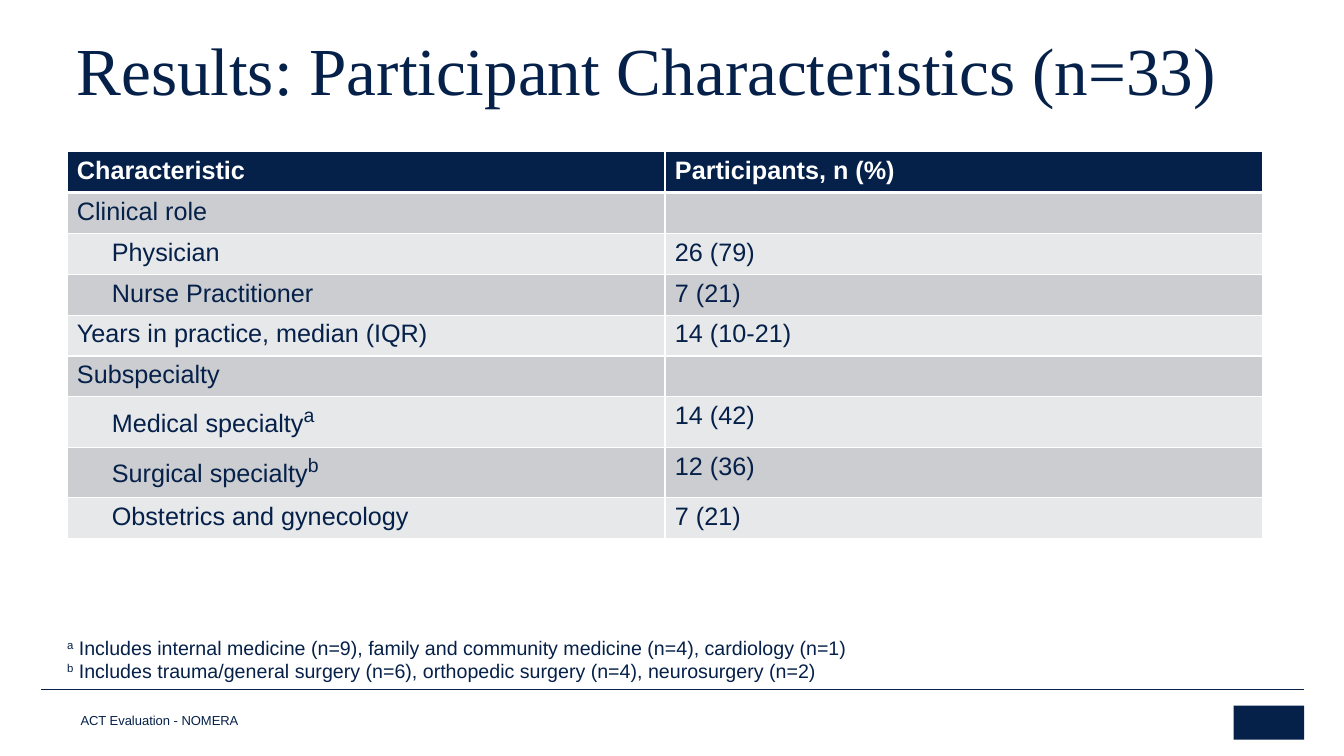
from lxml import etree
from pptx import Presentation
from pptx import util as u
from pptx.dml.color import RGBColor
from pptx.enum import shapes, text
from pptx.oxml.ns import qn

NAVY, WHITE = "052049", "FFFFFF"
BANDS = ["CCCDD0", "E7E8E9"]
ROW_HEIGHT, COLUMN_WIDTH = 1.03, 15.07
CELL_MARGIN, INDENT_MARGIN = 0.25, 1.13

# Label, value, indented, superscript mark
ROWS = [
    ("Clinical role", "", False, ""),
    ("Physician", "26 (79)", True, ""),
    ("Nurse Practitioner", "7 (21)", True, ""),
    ("Years in practice, median (IQR)", "14 (10-21)", False, ""),
    ("Subspecialty", "", False, ""),
    ("Medical specialty", "14 (42)", True, "a"),
    ("Surgical specialty", "12 (36)", True, "b"),
    ("Obstetrics and gynecology", "7 (21)", True, ""),
]
FOOTNOTES = [
    ("a", " Includes internal medicine (n=9), family and community medicine (n=4), cardiology (n=1)"),
    ("b", " Includes trauma/general surgery (n=6), orthopedic surgery (n=4), neurosurgery (n=2)"),
]


def color(value):
    return RGBColor.from_string(value)


def add_span(para, words, size=18, font="Arial", fill=NAVY, bold=False, raised=False):
    span = para.add_run()
    span.text = words
    span.font.size = u.Pt(size)
    span.font.name = font
    span.font.bold = bold
    span.font.color.rgb = color(fill)
    if raised:
        span._r.get_or_add_rPr().set("baseline", "30000")


def add_box(page, left, top, width, height, anchor, inset=0.0):
    box = page.shapes.add_textbox(u.Cm(left), u.Cm(top), u.Cm(width), u.Cm(height))
    frame = box.text_frame
    frame.word_wrap = True
    frame.vertical_anchor = anchor
    frame.margin_left = frame.margin_right = u.Cm(inset)
    frame.margin_top = frame.margin_bottom = u.Cm(inset / 2)
    return frame


def add_border(cell, side, points):
    line = etree.SubElement(cell._tc.get_or_add_tcPr(), qn(f"a:ln{side}"), w=str(u.Pt(points)))
    fill = etree.SubElement(line, qn("a:solidFill"))
    etree.SubElement(fill, qn("a:srgbClr"), val=WHITE)


def style_cell(cell, row, fill, margin=CELL_MARGIN):
    # The rule below the header is heavier than the others
    widths = {"L": 1, "R": 1, "T": 3 if row == 1 else 1, "B": 3 if row == 0 else 1}
    for side, points in widths.items():
        add_border(cell, side, points)
    cell.fill.solid()
    cell.fill.fore_color.rgb = color(fill)
    cell.margin_left = u.Cm(margin)


def add_characteristics(page):
    count = len(ROWS) + 1
    table = page.shapes.add_table(count, 2, u.Cm(1.69), u.Cm(3.82),
                                  u.Cm(2 * COLUMN_WIDTH), u.Cm(count * ROW_HEIGHT)).table
    for column in table.columns:
        column.width = u.Cm(COLUMN_WIDTH)
    for row in table.rows:
        row.height = u.Cm(ROW_HEIGHT)

    # Header
    for column, heading in enumerate(["Characteristic", "Participants, n (%)"]):
        cell = table.cell(0, column)
        style_cell(cell, 0, NAVY)
        add_span(cell.text_frame.paragraphs[0], heading, fill=WHITE, bold=True)

    # Body
    for row, (label, value, indented, mark) in enumerate(ROWS, start=1):
        fill = BANDS[(row - 1) % 2]
        name, number = table.cell(row, 0), table.cell(row, 1)
        style_cell(name, row, fill, INDENT_MARGIN if indented else CELL_MARGIN)
        style_cell(number, row, fill)
        para = name.text_frame.paragraphs[0]
        add_span(para, label)
        if mark:
            add_span(para, mark, size=24, raised=True)
        if value:
            add_span(number.text_frame.paragraphs[0], value)


def add_footnotes(page):
    frame = add_box(page, 1.69, 16.02, 30.25, 1.3, text.MSO_ANCHOR.TOP)
    for index, (mark, note) in enumerate(FOOTNOTES):
        para = frame.add_paragraph() if index else frame.paragraphs[0]
        add_span(para, mark, size=14, raised=True)
        add_span(para, note, size=14)


def add_rule(page, left, right, top):
    rule = page.shapes.add_connector(shapes.MSO_CONNECTOR.STRAIGHT,
                                     u.Cm(left), u.Cm(top), u.Cm(right), u.Cm(top))
    rule.line.color.rgb = color(NAVY)
    rule.line.width = u.Pt(0.25)
    etree.SubElement(rule._element.spPr, qn("a:effectLst"))


def add_block(page, left, top, width, height):
    block = page.shapes.add_shape(shapes.MSO_SHAPE.RECTANGLE,
                                  u.Cm(left), u.Cm(top), u.Cm(width), u.Cm(height))
    block.shadow.inherit = False
    block.fill.solid()
    block.fill.fore_color.rgb = color(NAVY)
    block.line.fill.background()


def main():
    deck = Presentation()
    deck.slide_width, deck.slide_height = u.Cm(33.87), u.Cm(19.05)
    page = deck.slides.add_slide(deck.slide_layouts[6])

    # Footer rule and block
    add_rule(page, 1.04, 32.87, 17.37)
    add_block(page, 31.09, 17.78, 1.78, 0.86)

    # Title
    title = add_box(page, 1.68, 1.17, 30.28, 1.7, text.MSO_ANCHOR.BOTTOM, inset=0.25).paragraphs[0]
    title.line_spacing = 0.85
    add_span(title, "Results: Participant Characteristics (n=33)", size=48, font="Times New Roman")

    # Footer text
    footer = add_box(page, 2.03, 17.98, 15.98, 0.38, text.MSO_ANCHOR.BOTTOM).paragraphs[0]
    add_span(footer, "ACT Evaluation - NOMERA", size=9.3)

    # Table and its notes
    add_characteristics(page)
    add_footnotes(page)

    deck.save("out.pptx")


if __name__ == "__main__":
    main()
